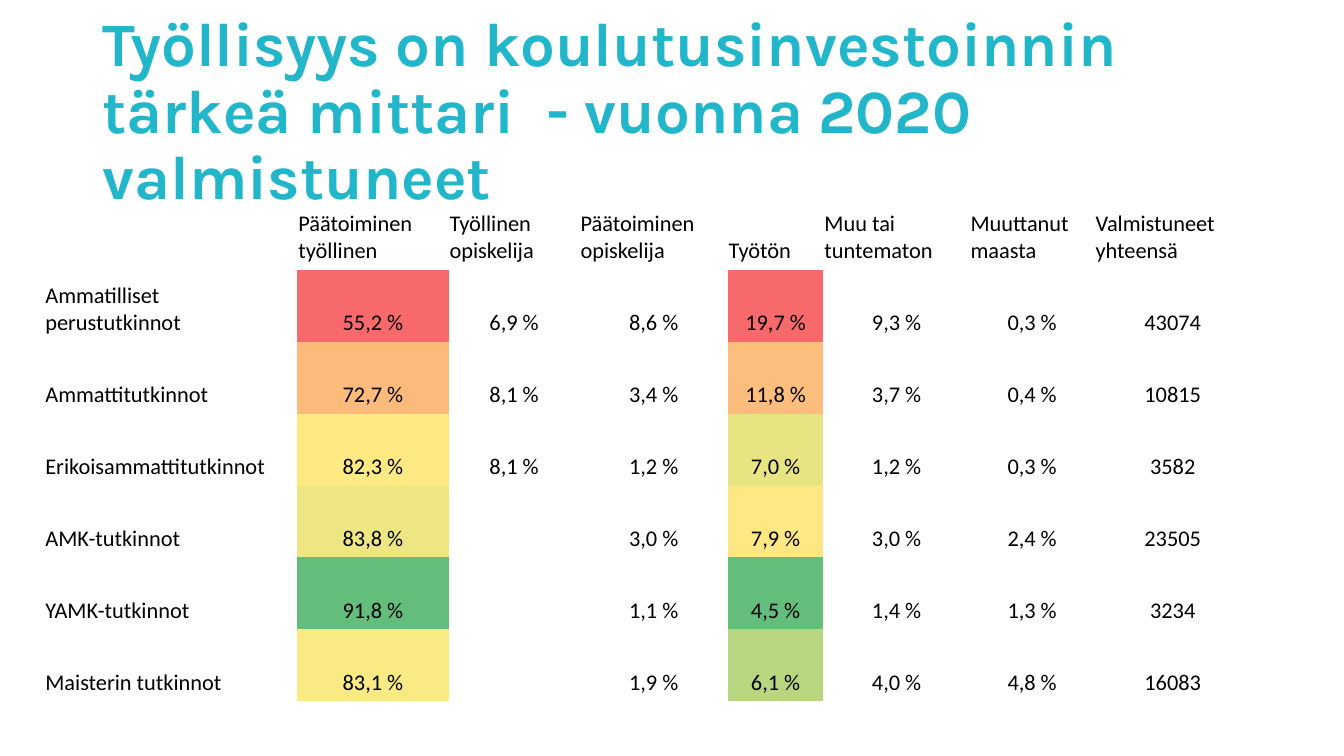
from pptx import Presentation
from pptx.dml.color import RGBColor
from pptx.enum.text import MSO_ANCHOR, MSO_AUTO_SIZE, PP_ALIGN
from pptx.util import Pt

MIDDLE, BOTTOM = MSO_ANCHOR.MIDDLE, MSO_ANCHOR.BOTTOM
LEFT, CENTER = PP_ALIGN.LEFT, PP_ALIGN.CENTER
NO_AUTOFIT = MSO_AUTO_SIZE.NONE
PLAIN_TABLE_STYLE = "{2D5ABB26-0587-4C30-8999-92F81FD0307C}"

TURQUOISE = RGBColor(0x22, 0xB6, 0xCA)
BLACK = RGBColor(0x00, 0x00, 0x00)
RED = RGBColor(0xF8, 0x69, 0x6B)
ORANGE = RGBColor(0xFC, 0xBB, 0x7A)
LIGHT_ORANGE = RGBColor(0xFD, 0xBD, 0x7C)
YELLOW = RGBColor(0xFE, 0xE9, 0x83)
WARM_YELLOW = RGBColor(0xFF, 0xE7, 0x84)
PALE_YELLOW = RGBColor(0xF9, 0xEA, 0x84)
LIME_YELLOW = RGBColor(0xED, 0xE6, 0x83)
LIME = RGBColor(0xE7, 0xE4, 0x82)
LIGHT_GREEN = RGBColor(0xB7, 0xD6, 0x7F)
GREEN = RGBColor(0x63, 0xBE, 0x7B)

EMPLOYED, UNEMPLOYED = 1, 4  # heat-mapped columns
COLUMN_WIDTHS = [180.72, 108, 93.6, 105.84, 68.4, 104.4, 89.28, 111.6]
ROWS = [
    ["", "Päätoiminen työllinen", "Työllinen opiskelija", "Päätoiminen opiskelija",
     "Työtön", "Muu tai tuntematon", "Muuttanut maasta", "Valmistuneet yhteensä"],
    ["Ammatilliset perustutkinnot", "55,2 %", "6,9 %", "8,6 %", "19,7 %", "9,3 %", "0,3 %", "43074"],
    ["Ammattitutkinnot", "72,7 %", "8,1 %", "3,4 %", "11,8 %", "3,7 %", "0,4 %", "10815"],
    ["Erikoisammattitutkinnot", "82,3 %", "8,1 %", "1,2 %", "7,0 %", "1,2 %", "0,3 %", "3582"],
    ["AMK-tutkinnot", "83,8 %", "", "3,0 %", "7,9 %", "3,0 %", "2,4 %", "23505"],
    ["YAMK-tutkinnot", "91,8 %", "", "1,1 %", "4,5 %", "1,4 %", "1,3 %", "3234"],
    ["Maisterin tutkinnot", "83,1 %", "", "1,9 %", "6,1 %", "4,0 %", "4,8 %", "16083"],
]
HEAT = {
    EMPLOYED: [RED, ORANGE, YELLOW, LIME_YELLOW, GREEN, PALE_YELLOW],
    UNEMPLOYED: [RED, LIGHT_ORANGE, LIME, WARM_YELLOW, GREEN, LIGHT_GREEN],
}


def write(frame, text, *, font, size, color, bold=False, align=LEFT, line_spacing=1.0):
    para = frame.paragraphs[0]
    para.alignment = align
    para.line_spacing = line_spacing
    span = para.add_run()
    span.text = text
    span.font.name = font
    span.font.size = Pt(size)
    span.font.bold = bold
    span.font.color.rgb = color


deck = Presentation()
deck.slide_width, deck.slide_height = Pt(960), Pt(540)
page = deck.slides.add_slide(deck.slide_layouts[5])

# Title
title = page.shapes.title
title.left, title.top, title.width, title.height = Pt(66), Pt(28.8), Pt(828), Pt(104.4)
title.text_frame.word_wrap = True
title.text_frame.auto_size = NO_AUTOFIT
title.text_frame.vertical_anchor = MIDDLE
write(title.text_frame, "Työllisyys on koulutusinvestoinnin tärkeä mittari  - vuonna 2020 valmistuneet",
      font="Karla", size=44, color=TURQUOISE, bold=True, line_spacing=0.9)

# Table without banding or grid
table_box = page.shapes.add_table(len(ROWS), len(COLUMN_WIDTHS),
                                  Pt(31.68), Pt(141.12), Pt(sum(COLUMN_WIDTHS)), Pt(360))
table = table_box.table
table.first_row = table.horz_banding = False
for style in table_box.element.iter("{*}tableStyleId"):
    style.text = PLAIN_TABLE_STYLE
for column, width in zip(table.columns, COLUMN_WIDTHS):
    column.width = Pt(width)

# Cells
for r, row in enumerate(ROWS):
    for c, text in enumerate(row):
        cell = table.cell(r, c)
        cell.vertical_anchor = BOTTOM
        cell.margin_left = cell.margin_right = cell.margin_top = Pt(0.72)
        cell.margin_bottom = Pt(3.6)
        if r > 0 and c in HEAT:
            cell.fill.solid()
            cell.fill.fore_color.rgb = HEAT[c][r - 1]
        else:
            cell.fill.background()
        if text:
            write(cell.text_frame, text, font="Calibri", size=16, color=BLACK,
                  align=CENTER if r > 0 and c > 0 else LEFT)

deck.save("out.pptx")
